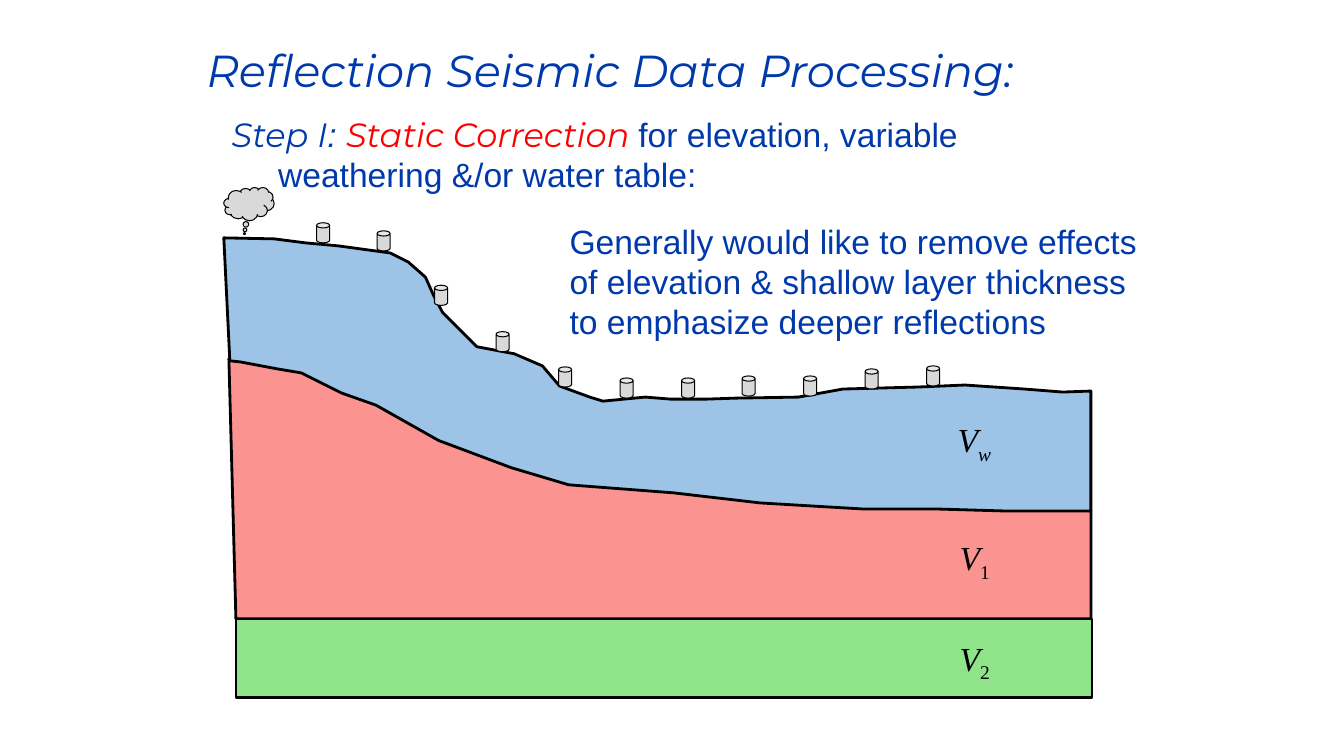
"""Build the slide on static correction in reflection seismic data processing."""
from pptx import Presentation
from pptx.dml.color import RGBColor
from pptx.enum.shapes import MSO_SHAPE as SHAPE
from pptx.enum.text import MSO_AUTO_SIZE as AUTO
from pptx.util import Pt

PX = 9144
SLIDE = (1333, 750)
BLUE, RED, BLACK, GRAY = "0039AC", "FF0000", "000000", "D9D9D9"
SANS, DISPLAY, SERIF = "Arial", "Montserrat", "Times New Roman"

TITLE = ((195, 37, 912, 64), "Reflection Seismic Data Processing:")
STEP_BOX = (220, 108, 796, 91)
STEP_RUNS = [
    ("Step I", DISPLAY, BLUE, True),
    (": ", SANS, BLUE, True),
    ("Static Correction ", DISPLAY, RED, True),
    ("for elevation, variable", SANS, BLUE, False),
]
STEP_REST, STEP_INDENT = "weathering &/or water table:", 46
GOAL_BOX = (555, 214, 589, 131)
GOAL = [
    "Generally would like to remove effects",
    "of elevation & shallow layer thickness",
    "to emphasize deeper reflections",
]
VELOCITIES = [
    ((940, 411, 55, 50), "w", True),
    ((942, 528, 52, 50), "1", False),
    ((942, 628, 52, 50), "2", False),
]

LAYER_1 = [(227, 356), (1082, 507), (1082, 614), (234, 614)]
SURFACE = [
    (222, 236), (272, 237), (303, 241), (336, 244), (387, 251), (405, 260),
    (422, 275), (430, 293), (439, 310), (454, 325), (473, 344), (510, 351),
    (538, 363), (555, 383), (585, 394), (598, 398), (640, 394), (665, 396),
    (701, 396), (730, 395), (792, 394), (836, 386), (911, 384), (957, 382),
    (1016, 386), (1054, 389), (1082, 388),
]
WEATHERING_BASE = [
    (1082, 507), (998, 507), (929, 505), (856, 505), (754, 499), (668, 489),
    (564, 481), (507, 464), (435, 437), (373, 402), (339, 390), (299, 370),
    (275, 366), (238, 359), (228, 358),
]
LAYER_2 = (234, 614, 849, 78)
BLAST = (222, 186, 50, 33)
GEOPHONE_SIZE = (13, 20)
GEOPHONES = [
    (314, 221), (374, 229), (431, 283), (492, 329), (554, 364), (615, 375),
    (676, 375), (736, 373), (797, 373), (858, 366), (919, 363),
]


def rgb(color):
    return RGBColor.from_string(color)


def emu(box):
    return [v * PX for v in box]


def style(sp, fill, width):
    sp.shadow.inherit = False
    sp.fill.solid()
    sp.fill.fore_color.rgb = rgb(fill)
    sp.line.color.rgb = rgb(BLACK)
    sp.line.width = Pt(width)


def add_layer(shapes, points, fill):
    builder = shapes.build_freeform(*points[0], scale=PX)
    builder.add_line_segments(points[1:], close=True)
    style(builder.convert_to_shape(), fill, 2)


def add_preset(shapes, kind, box, fill, width, adjustments=()):
    sp = shapes.add_shape(kind, *emu(box))
    for i, value in enumerate(adjustments):
        sp.adjustments[i] = value
    style(sp, fill, width)


def set_font(font, name, color, italic=False, size=24):
    font.name, font.size, font.italic = name, Pt(size), italic
    font.color.rgb = rgb(color)


def add_text(shapes, box):
    tf = shapes.add_textbox(*emu(box)).text_frame
    tf.word_wrap = False
    tf.auto_size = AUTO.SHAPE_TO_FIT_TEXT
    return tf


def add_run(p, text):
    r = p.add_run()
    r.text = text
    return r


def main():
    prs = Presentation()
    prs.slide_width, prs.slide_height = emu(SLIDE)
    s = prs.slides.add_slide(prs.slide_layouts[6])
    shapes = s.shapes

    box, text = TITLE
    p = add_text(shapes, box).paragraphs[0]
    p.text = text
    set_font(p.font, DISPLAY, BLUE, True, 32)

    tf = add_text(shapes, STEP_BOX)
    for text, name, color, italic in STEP_RUNS:
        set_font(add_run(tf.paragraphs[0], text).font, name, color, italic)
    p = tf.add_paragraph()
    p.text = STEP_REST
    set_font(p.font, SANS, BLUE)
    p._p.get_or_add_pPr().set("marL", str(STEP_INDENT * PX))

    add_layer(shapes, LAYER_1, "FB9491")
    add_layer(shapes, SURFACE + WEATHERING_BASE, "9DC3E6")
    add_preset(shapes, SHAPE.RECTANGLE, LAYER_2, "8FE388", 2)
    add_preset(shapes, SHAPE.CLOUD_CALLOUT, BLAST, GRAY, 0.75, (-0.09, 0.89))
    for spot in GEOPHONES:
        add_preset(shapes, SHAPE.CAN, spot + GEOPHONE_SIZE, GRAY, 0.75, (0.4,))

    tf = add_text(shapes, GOAL_BOX)
    tf.text = "\n".join(GOAL)
    for p in tf.paragraphs:
        set_font(p.font, SANS, BLUE)

    for box, index, italic in VELOCITIES:
        p = add_text(shapes, box).paragraphs[0]
        set_font(add_run(p, "V").font, SERIF, BLACK, True)
        r = add_run(p, index)
        set_font(r.font, SERIF, BLACK, italic)
        r._r.get_or_add_rPr().set("baseline", "-25000")

    prs.save("out.pptx")


if __name__ == "__main__":
    main()
